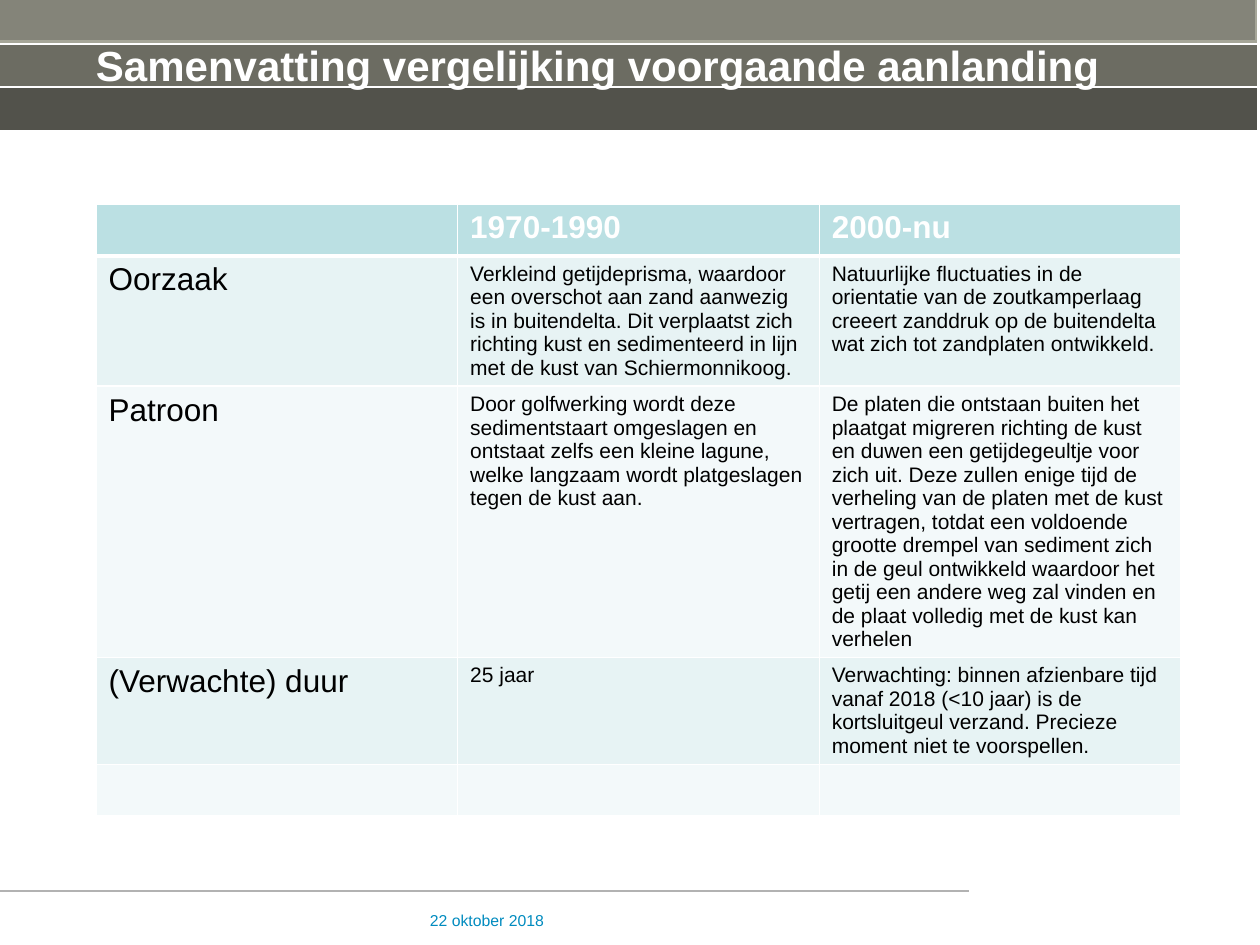
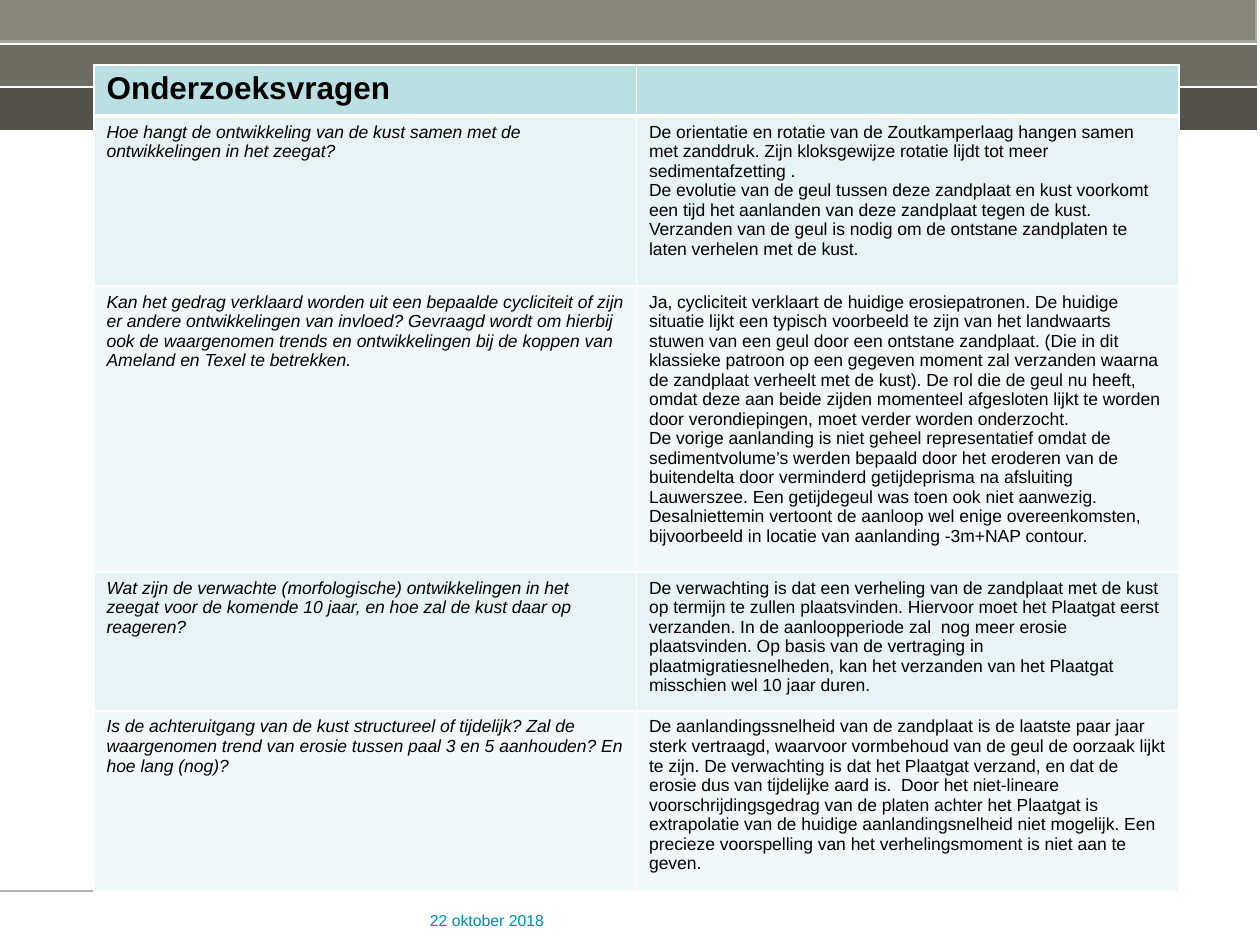
from lxml import etree
from pptx import Presentation
from pptx import util as u
from pptx.dml.color import RGBColor
from pptx.enum import shapes, text
from pptx.oxml.ns import qn

PX_PER_INCH = 126
FONT = "Arial"
COLORS = {
    "band": "A6A698", "shade": "000000", "white": "FFFFFF", "rule": "B2B2B2",
    "ink": "000000", "date": "008BBF",
    "header": "BBE0E3", "odd_row": "E7F3F4", "even_row": "F3F9FA",
}
BAND_W, BAND_H = 1257, 44
TABLE_W = 1085
DATE = "22 oktober 2018"

COMPARISON = [
    ["", "1970-1990", "2000-nu"],
    ["Oorzaak",
     "Verkleind getijdeprisma, waardoor een overschot aan zand aanwezig is in "
     "buitendelta. Dit verplaatst zich richting kust en sedimenteerd in lijn met "
     "de kust van Schiermonnikoog.",
     "Natuurlijke fluctuaties in de orientatie van de zoutkamperlaag creeert "
     "zanddruk op de buitendelta wat zich tot zandplaten ontwikkeld."],
    ["Patroon",
     "Door golfwerking wordt deze sedimentstaart omgeslagen en ontstaat zelfs een "
     "kleine lagune, welke langzaam wordt platgeslagen tegen de kust aan.",
     "De platen die ontstaan buiten het plaatgat migreren richting de kust en "
     "duwen een getijdegeultje voor zich uit. Deze zullen enige tijd de verheling "
     "van de platen met de kust vertragen, totdat een voldoende grootte drempel "
     "van sediment zich in de geul ontwikkeld waardoor het getij een andere weg "
     "zal vinden en de plaat volledig met de kust kan verhelen"],
    ["(Verwachte) duur", "25 jaar",
     "Verwachting: binnen afzienbare tijd vanaf 2018 (<10 jaar) is de "
     "kortsluitgeul verzand. Precieze moment niet te voorspellen."],
    ["", "", ""],
]

QUESTIONS = [
    ["Onderzoeksvragen", ""],
    ["Hoe hangt de ontwikkeling van de kust samen met de ontwikkelingen in het "
     "zeegat?",
     "De orientatie en rotatie van de Zoutkamperlaag hangen samen met zanddruk. "
     "Zijn kloksgewijze rotatie lijdt tot meer sedimentafzetting .\n"
     "De evolutie van de geul tussen deze zandplaat en kust voorkomt een tijd het "
     "aanlanden van deze zandplaat tegen de kust. Verzanden van de geul is nodig "
     "om de ontstane zandplaten te laten verhelen met de kust."],
    ["Kan het gedrag verklaard worden uit een bepaalde cycliciteit of zijn er "
     "andere ontwikkelingen van invloed? Gevraagd wordt om hierbij ook de "
     "waargenomen trends en ontwikkelingen bij de koppen van Ameland en Texel te "
     "betrekken.",
     "Ja, cycliciteit verklaart de huidige erosiepatronen. De huidige situatie "
     "lijkt een typisch voorbeeld te zijn van het landwaarts stuwen van een geul "
     "door een ontstane zandplaat. (Die in dit klassieke patroon op een gegeven "
     "moment zal verzanden waarna de zandplaat verheelt met de kust). De rol die "
     "de geul nu heeft, omdat deze aan beide zijden momenteel afgesloten lijkt te "
     "worden door verondiepingen, moet verder worden onderzocht.\n"
     "De vorige aanlanding is niet geheel representatief omdat de "
     "sedimentvolume’s werden bepaald door het eroderen van de buitendelta door "
     "verminderd getijdeprisma na afsluiting Lauwerszee. Een getijdegeul was toen "
     "ook niet aanwezig. Desalniettemin vertoont de aanloop wel enige "
     "overeenkomsten, bijvoorbeeld in locatie van aanlanding -3m+NAP contour."],
    ["Wat zijn de verwachte (morfologische) ontwikkelingen in het zeegat voor de "
     "komende 10 jaar, en hoe zal de kust daar op reageren?",
     "De verwachting is dat een verheling van de zandplaat met de kust op termijn "
     "te zullen plaatsvinden. Hiervoor moet het Plaatgat eerst verzanden. In de "
     "aanloopperiode zal  nog meer erosie plaatsvinden. Op basis van de vertraging "
     "in plaatmigratiesnelheden, kan het verzanden van het Plaatgat misschien wel "
     "10 jaar duren."],
    ["Is de achteruitgang van de kust structureel of tijdelijk? Zal de waargenomen "
     "trend van erosie tussen paal 3 en 5 aanhouden? En hoe lang (nog)?",
     "De aanlandingssnelheid van de zandplaat is de laatste paar jaar sterk "
     "vertraagd, waarvoor vormbehoud van de geul de oorzaak lijkt te zijn. De "
     "verwachting is dat het Plaatgat verzand, en dat de erosie dus van tijdelijke "
     "aard is.  Door het niet-lineare voorschrijdingsgedrag van de platen achter "
     "het Plaatgat is extrapolatie van de huidige aanlandingsnelheid niet "
     "mogelijk. Een precieze voorspelling van het verhelingsmoment is niet aan te "
     "geven."],
]


def px(n):
    return u.Emu(round(n * u.Inches(1) / PX_PER_INCH))


def rgb(name):
    return RGBColor.from_string(COLORS[name])


def style_text(tf, size, color, bold=False, italic=False):
    for p in tf.paragraphs:
        for r in p.runs:
            r.font.name = FONT
            r.font.size = u.Pt(size)
            r.font.bold = bold
            r.font.italic = italic
            r.font.color.rgb = rgb(color)


def add_band(slide, x, y, h, color, opacity=100):
    sp = slide.shapes.add_shape(shapes.MSO_SHAPE.RECTANGLE,
                                px(x), px(y), px(BAND_W), px(h))
    sp.shadow.inherit = False
    sp.fill.solid()
    sp.fill.fore_color.rgb = rgb(color)
    sp.line.fill.background()
    if opacity < 100:
        clr = sp._element.spPr.find(".//" + qn("a:srgbClr"))
        etree.SubElement(clr, qn("a:alpha"), val=str(opacity * 1000))


def add_rule(slide, y, width, color):
    line = slide.shapes.add_connector(shapes.MSO_CONNECTOR.STRAIGHT,
                                      0, px(y), px(width), px(y))
    line.line.color.rgb = rgb(color)
    line.line.width = u.Pt(0.75)
    etree.SubElement(line._element.spPr, qn("a:effectLst"))


def add_date(slide):
    box = slide.shapes.add_textbox(px(430), px(911), px(198), px(44))
    tf = box.text_frame
    tf.margin_left = tf.margin_right = tf.margin_top = tf.margin_bottom = 0
    tf.word_wrap = True
    tf.text = DATE
    style_text(tf, 9, "date")


def add_frame(slide):
    """Draw the header bands, footer rule and date that every slide has."""
    add_band(slide, 0, 0, 3 * BAND_H - 1, "band")
    for x, y, opacity in ((-2, -4, 20), (0, BAND_H, 35), (0, 2 * BAND_H - 1, 50)):
        add_band(slide, x, y, BAND_H, "shade", opacity)
    for y in (44, 87, 131):
        add_rule(slide, y, BAND_W, "white")
    add_rule(slide, 891, 969, "rule")
    add_date(slide)


def set_title(slide, title):
    sp = slide.shapes.title
    sp.left, sp.top, sp.width, sp.height = px(96), px(33), px(1129), px(84)
    tf = sp.text_frame
    tf.margin_left = tf.margin_right = 0
    tf.margin_top = tf.margin_bottom = u.Inches(0.05)
    tf.vertical_anchor = text.MSO_ANCHOR.TOP
    tf.auto_size = text.MSO_AUTO_SIZE.NONE
    tf.text = title
    tf.paragraphs[0].alignment = text.PP_ALIGN.LEFT
    style_text(tf, 24, "white", bold=True)
    slide.shapes._spTree.append(sp._element)  # in front of the bands


def set_borders(cell, top, bottom):
    tcPr = cell._tc.get_or_add_tcPr()
    for side, width in (("L", 1), ("R", 1), ("T", top), ("B", bottom)):
        ln = etree.SubElement(tcPr, qn("a:ln" + side), w=str(u.Pt(width)))
        fill = etree.SubElement(ln, qn("a:solidFill"))
        etree.SubElement(fill, qn("a:srgbClr"), val=COLORS["white"])


def add_table(slide, x, y, rows, heights, header_color, label_style, body_size):
    """Fill a table; label_style holds the text options of the first column."""
    n_cols = len(rows[0])
    frame = slide.shapes.add_table(len(rows), n_cols, px(x), px(y),
                                   px(TABLE_W), px(sum(heights)))
    table = frame.table
    table.horz_banding = False
    for col in table.columns:
        col.width = px(TABLE_W / n_cols)
    for i, (values, height) in enumerate(zip(rows, heights)):
        table.rows[i].height = px(height)
        row_fill = "header" if i == 0 else "odd_row" if i % 2 else "even_row"
        for j, value in enumerate(values):
            cell = table.cell(i, j)
            set_borders(cell, top=3 if i == 1 else 1, bottom=3 if i == 0 else 1)
            cell.fill.solid()
            cell.fill.fore_color.rgb = rgb(row_fill)
            if not value:
                continue
            cell.text_frame.text = value
            if i == 0:
                style_text(cell.text_frame, 18, header_color, bold=True)
            elif j == 0:
                style_text(cell.text_frame, color="ink", **label_style)
            else:
                style_text(cell.text_frame, body_size, "ink")


def main():
    prs = Presentation()
    prs.slide_width, prs.slide_height = u.Inches(10), u.Inches(7.5)
    title_only, blank = prs.slide_layouts[5], prs.slide_layouts[6]

    s = prs.slides.add_slide(title_only)
    add_frame(s)
    set_title(s, "Samenvatting vergelijking voorgaande aanlanding")
    add_table(s, 96, 204, COMPARISON, [52, 130, 271, 107, 50],
              "white", {"size": 18}, 12)

    s = prs.slides.add_slide(blank)
    add_frame(s)
    add_table(s, 94, 65, QUESTIONS, [51, 170, 266, 130, 169],
              "ink", {"size": 10, "italic": True}, 10)

    prs.save("out.pptx")


if __name__ == "__main__":
    main()
